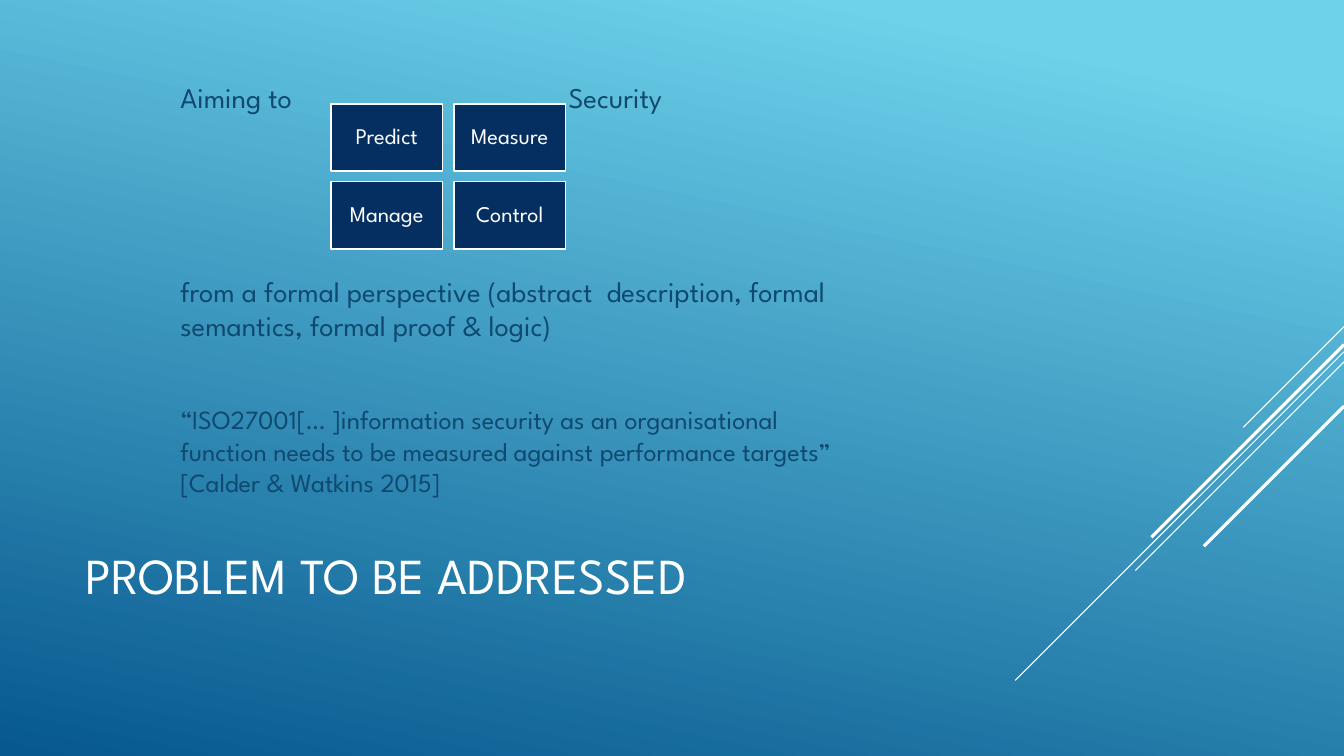
from lxml import etree
from pptx import Presentation
from pptx import util as u
from pptx.dml.color import RGBColor
from pptx.enum import shapes, text
from pptx.oxml import ns

FONT = "League Spartan"
WHITE, NAVY, INK = "FFFFFF", "052F61", "0F496F"


def color(value):
    """Turn a hex string into a colour."""
    return RGBColor.from_string(value)


class SlideBuilder:
    """Holds the style and the current slide."""

    def __init__(self, deck):
        """Add a title-only slide."""
        self.slide = deck.slides.add_slide(deck.slide_layouts[5])

    def background(self, stops, angle):
        """Fill the background with a linear gradient."""
        fill = self.slide.background.fill
        fill.gradient()
        fill.gradient_angle = 360 - angle
        for stop, (position, value) in zip(fill.gradient_stops, stops):
            stop.position = position
            stop.color.rgb = color(value)

    def span(self, para, words, size, value):
        """Add one styled run."""
        span = para.add_run()
        span.text = words
        span.font.name = FONT
        span.font.size = u.Pt(size)
        span.font.color.rgb = color(value)

    def frame(self, box, inset_x=0.1, inset_y=0.05):
        """Prepare a wrapped, vertically centred text frame."""
        frame = box.text_frame
        frame.word_wrap = True
        frame.auto_size = text.MSO_AUTO_SIZE.NONE
        frame.vertical_anchor = text.MSO_ANCHOR.MIDDLE
        frame.margin_left = frame.margin_right = u.Inches(inset_x)
        frame.margin_top = frame.margin_bottom = u.Inches(inset_y)
        return frame

    def title(self, words, left, top, width, height):
        """Place and format the title."""
        box = self.slide.shapes.title
        box.left, box.top = u.Inches(left), u.Inches(top)
        box.width, box.height = u.Inches(width), u.Inches(height)
        para = self.frame(box).paragraphs[0]
        para.alignment = text.PP_ALIGN.LEFT
        para.line_spacing = 0.9
        self.span(para, words, 36, WHITE)

    def body(self, items, left, top, width, height, tab):
        """Add paragraphs given as words, size and space before."""
        box = self.slide.shapes.add_textbox(
            u.Inches(left), u.Inches(top), u.Inches(width), u.Inches(height))
        frame = self.frame(box)
        for index, (words, size, before) in enumerate(items):
            para = frame.add_paragraph() if index else frame.paragraphs[0]
            para.space_before, para.space_after = u.Pt(before), u.Pt(6)
            self.span(para, words, size, INK)
        props = frame.paragraphs[0]._p.get_or_add_pPr()
        tabs = etree.SubElement(props, ns.qn("a:tabLst"))
        etree.SubElement(tabs, ns.qn("a:tab"), pos=str(u.Inches(tab)), algn="l")

    def tile(self, words, left, top, width, height):
        """Add an outlined rectangle with a centred label."""
        box = self.slide.shapes.add_shape(
            shapes.MSO_SHAPE.RECTANGLE, u.Inches(left), u.Inches(top),
            u.Inches(width), u.Inches(height))
        box.shadow.inherit = False
        box.fill.solid()
        box.fill.fore_color.rgb = color(NAVY)
        box.line.color.rgb = color(WHITE)
        box.line.width = u.Pt(1.25)
        para = self.frame(box, 0.07, 0.07).paragraphs[0]
        para.alignment = text.PP_ALIGN.CENTER
        para.line_spacing = 0.9
        self.span(para, words, 16, WHITE)

    def diagonal(self, right, top, run, weight):
        """Add a 45 degree line falling to the left."""
        line = self.slide.shapes.add_connector(
            shapes.MSO_CONNECTOR.STRAIGHT, u.Inches(right), u.Inches(top),
            u.Inches(right - run), u.Inches(top + run))
        line.line.color.rgb = color(WHITE)
        line.line.width = u.Pt(weight)
        etree.SubElement(line._element.spPr, ns.qn("a:effectLst"))


def main():
    """Build and save the slide."""
    deck = Presentation()
    deck.slide_width, deck.slide_height = u.Inches(13.33), u.Inches(7.5)
    page = SlideBuilder(deck)
    page.background([(0.1, "6ED2EB"), (1, "06588E")], 102)

    for top, run, weight in [(3.24, 1, 0.75), (3.49, 3.26, 0.75),
                             (3.59, 2.07, 0.75), (3.42, 1.91, 2.25),
                             (4.03, 1.39, 2.25)]:
        page.diagonal(13.33, top, run, weight)

    page.title("PROBLEM TO BE ADDRESSED", 0.75, 4.91, 9.33, 1.65)
    page.body([
        ("Aiming to\tSecurity", 20.4, 4),
        ("from a formal perspective (abstract  description, formal "
         "semantics, formal proof & logic)", 20.4, 108),
        ("“ISO27001[… ]information security as an organisational function "
         "needs to be measured against performance targets” "
         "[Calder & Watkins 2015]", 18.7, 38),
    ], 1.69, 0.82, 6.78, 4.09, 3.85)

    for index, words in enumerate(["Predict", "Measure", "Manage", "Control"]):
        row, column = divmod(index, 2)
        page.tile(words, 3.28 + 1.22 * column, 1.03 + 0.77 * row, 1.11, 0.67)

    deck.save("out.pptx")


if __name__ == "__main__":
    main()
